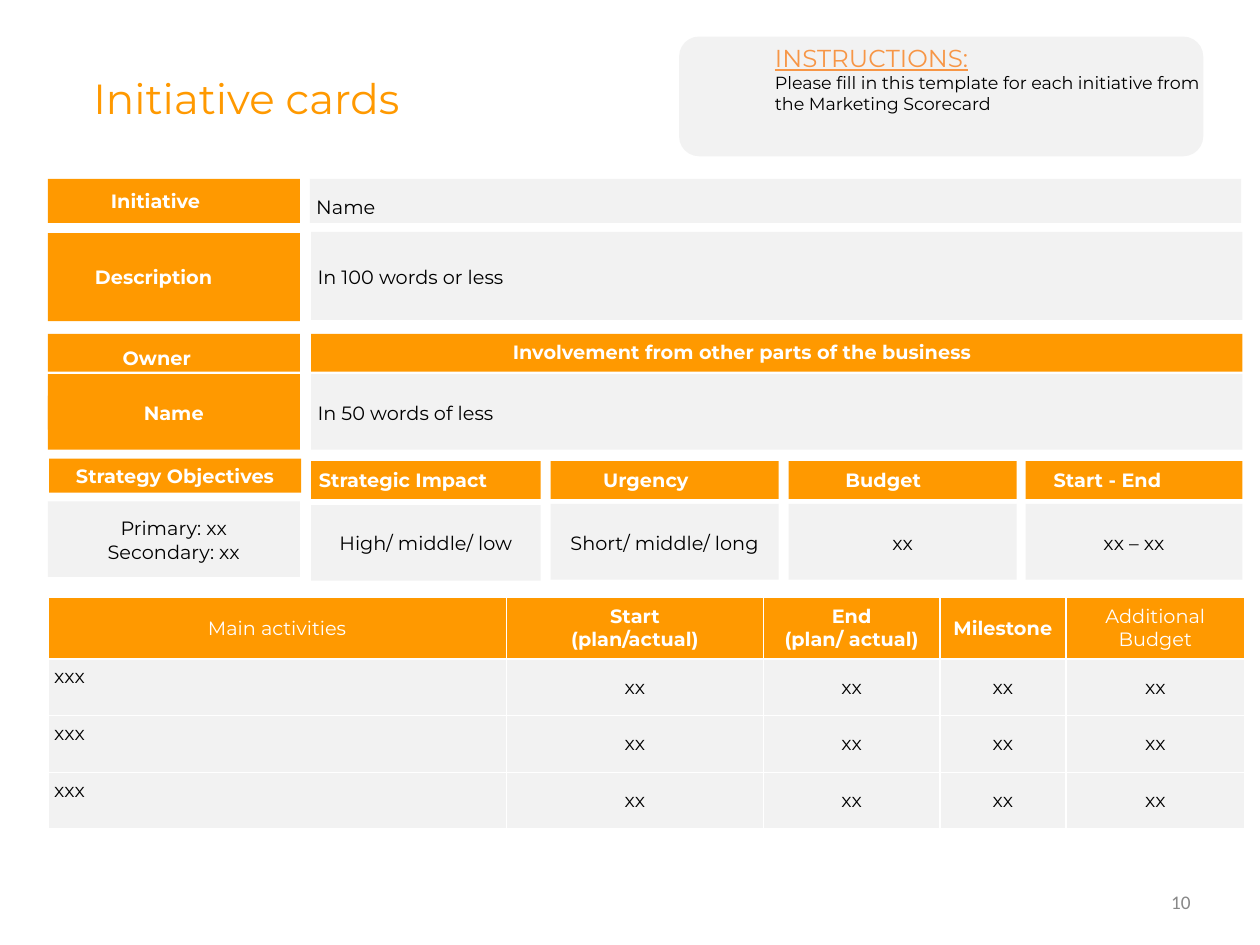
from lxml import etree
from pptx import Presentation
from pptx.dml.color import RGBColor
from pptx.enum import shapes, text
from pptx.oxml import ns
from pptx.util import Inches, Pt

COLORS = {"orange": "FF9900", "gray": "F2F2F2", "white": "FFFFFF",
          "black": "000000", "heading": "F79646", "number": "888888"}
LEFT, CENTER, RIGHT = (text.PP_ALIGN.LEFT, text.PP_ALIGN.CENTER, text.PP_ALIGN.RIGHT)
TOP, MIDDLE = text.MSO_ANCHOR.TOP, text.MSO_ANCHOR.MIDDLE
BODY = {"size": 11, "name": "Montserrat", "color": "black", "bold": False}
HEAD = {**BODY, "color": "white", "bold": True}
LIGHT_HEAD = {**HEAD, "bold": False}

PANELS = [
    ("orange", 0.38, 1.42, 2, 0.35), ("gray", 2.46, 1.42, 7.39, 0.35),
    ("orange", 0.38, 1.85, 2, 0.7), ("gray", 2.47, 1.84, 7.39, 0.7),
    ("orange", 0.38, 2.65, 2, 0.3), ("orange", 2.47, 2.65, 7.39, 0.3),
    ("orange", 0.38, 2.97, 2, 0.6), ("gray", 2.47, 2.97, 7.39, 0.6),
    ("gray", 0.38, 3.98, 2, 0.6),
]
FILLED_LABELS = [
    ("Initiative", 0.71, 1.46, 1.05, 0.27),
    ("Description", 0.6, 2.06, 1.24, 0.27),
    ("Owner", 0.82, 2.75, 0.85, 0.18),
    ("Name", 0.38, 3.14, 2, 0.27),
    ("Strategy Objectives", 0.39, 3.64, 2, 0.27),
]
ANSWERS = [
    ("Name", 2.46, 1.46, 1.5),
    ("In 100 words or less", 2.47, 2.06, 1),
    ("In 50 words of less", 2.47, 3.14, 1),
]
FACTS = [
    ("Strategic Impact", "High/ middle/ low", 2.47, 1.82, 4.01, 2.38, 1.64),
    ("Urgency", "Short/ middle/ long", 4.37, 1.81, 4, 4.63, 0.99),
    ("Budget", "xx", 6.26, 1.81, 4, 6.55, 0.92),
    ("Start - End", "xx – xx", 8.14, 1.72, 4, 8.14, 1.3),
]
ACTIVITY_HEADS = ["Main activities", "Start\v(plan/actual)", "End\v(plan/ actual)",
                  "Milestone", "Additional Budget"]
LIGHT_COLUMNS = (0, 4)
ACTIVITIES = [["xxx"] + ["xx"] * 4 for _ in range(3)]
COLUMN_WIDTHS = [3.64, 2.04, 1.4, 1, 1.42]
ROW_HEIGHTS = [0.49, 0.45, 0.45, 0.45]


def color(name):
    return RGBColor.from_string(COLORS[name])


def paint(target, fill):
    target.fill.solid()
    target.fill.fore_color.rgb = color(fill)


def write(frame, lines, align=CENTER, anchor=MIDDLE, spacing=1):
    settings = {"word_wrap": True, "vertical_anchor": anchor,
                "auto_size": text.MSO_AUTO_SIZE.NONE}
    settings.update({f"margin_{side}": Inches(0.05)
                     for side in ("left", "right", "top", "bottom")})
    for key, value in settings.items():
        setattr(frame, key, value)
    frame.text = "\n".join(words for words, _ in lines)
    for para, (_, style) in zip(frame.paragraphs, lines):
        para.alignment = align
        para.line_spacing = spacing
        for span in para.runs:
            for key, value in style.items():
                if key == "color":
                    span.font.color.rgb = color(value)
                else:
                    setattr(span.font, key, Pt(value) if key == "size" else value)


def add_panel(page, fill, *place, kind=shapes.MSO_SHAPE.RECTANGLE):
    panel = page.shapes.add_shape(kind, *map(Inches, place))
    panel.shadow.inherit = False
    panel.line.fill.background()
    paint(panel, fill)
    return panel


def add_label(page, lines, *place, **layout):
    box = page.shapes.add_textbox(*map(Inches, place))
    write(box.text_frame, lines, **layout)


def add_borders(cell):
    properties = cell._tc.get_or_add_tcPr()
    for index, side in enumerate(("lnL", "lnR", "lnT", "lnB")):
        line = etree.Element(ns.qn(f"a:{side}"), w=str(Pt(1)))
        fill = etree.SubElement(line, ns.qn("a:solidFill"))
        etree.SubElement(fill, ns.qn("a:srgbClr"), val=COLORS["white"])
        properties.insert(index, line)


def add_title(page):
    title = page.shapes.title
    for key, value in zip(("left", "top", "width", "height"), (0.69, 0.38, 8.16, 0.5)):
        setattr(title, key, Inches(value))
    write(title.text_frame, [("Initiative cards", {**BODY, "size": 24, "color": "orange"})],
          align=LEFT, anchor=TOP, spacing=1.36)


def add_instructions(page):
    panel = add_panel(page, "gray", 5.39, 0.29, 4.16, 0.95,
                      kind=shapes.MSO_SHAPE.ROUNDED_RECTANGLE)
    panel.adjustments[0] = 0.167
    add_label(page, [
        ("INSTRUCTIONS:", {**BODY, "size": 14, "color": "heading", "underline": True}),
        ("Please fill in this template for each initiative from the Marketing Scorecard",
         {**BODY, "size": 10}),
    ], 6.1, 0.29, 3.58, 0.85, align=LEFT, anchor=TOP)


def add_card(page):
    for panel in PANELS:
        add_panel(page, *panel)
    for words, *place in FILLED_LABELS:
        write(add_panel(page, "orange", *place).text_frame, [(words, HEAD)])
    for words, left, top, spacing in ANSWERS:
        add_label(page, [(words, BODY)], left, top, 7.39, 0.27, align=LEFT, spacing=spacing)
    add_label(page, [("Involvement from other parts of the business", HEAD)],
              3.94, 2.66, 3.9, 0.27)
    add_label(page, [("Primary: xx", BODY), ("Secondary: xx", BODY)], 0.38, 4.07, 2, 0.43)
    for head, value, left, width, top, head_left, head_width in FACTS:
        add_panel(page, "orange", left, 3.66, width, 0.3)
        add_label(page, [(head, HEAD)], head_left, 3.67, head_width, 0.27)
        add_panel(page, "gray", left, top, width, 0.6)
        add_label(page, [(value, BODY)], left, 4.17, width, 0.27)


def add_activities(page):
    rows = [ACTIVITY_HEADS] + ACTIVITIES
    table = page.shapes.add_table(
        len(rows), len(COLUMN_WIDTHS), Inches(0.38), Inches(4.74),
        Inches(sum(COLUMN_WIDTHS)), Inches(sum(ROW_HEIGHTS))).table
    for column, width in zip(table.columns, COLUMN_WIDTHS):
        column.width = Inches(width)
    for row, height in zip(table.rows, ROW_HEIGHTS):
        row.height = Inches(height)
    for row, values in enumerate(rows):
        for column, words in enumerate(values):
            cell = table.cell(row, column)
            is_name = row > 0 and column == 0
            head = LIGHT_HEAD if column in LIGHT_COLUMNS else HEAD
            write(cell.text_frame, [(words, BODY if row else head)],
                  align=LEFT if is_name else CENTER)
            cell.vertical_anchor = TOP if is_name else MIDDLE
            for side in ("left", "right", "top", "bottom"):
                setattr(cell, f"margin_{side}", Inches(0.05))
            paint(cell, "gray" if row else "orange")
            add_borders(cell)


def main():
    deck = Presentation()
    deck.slide_width, deck.slide_height = Inches(10), Inches(7.5)
    page = deck.slides.add_slide(deck.slide_layouts[5])
    add_title(page)
    add_card(page)
    add_activities(page)
    add_instructions(page)
    add_label(page, [("10", {**BODY, "name": "Calibri", "color": "number"})],
              9.23, 7.02, 0.27, 0.27, align=RIGHT)
    deck.save("out.pptx")


if __name__ == "__main__":
    main()
